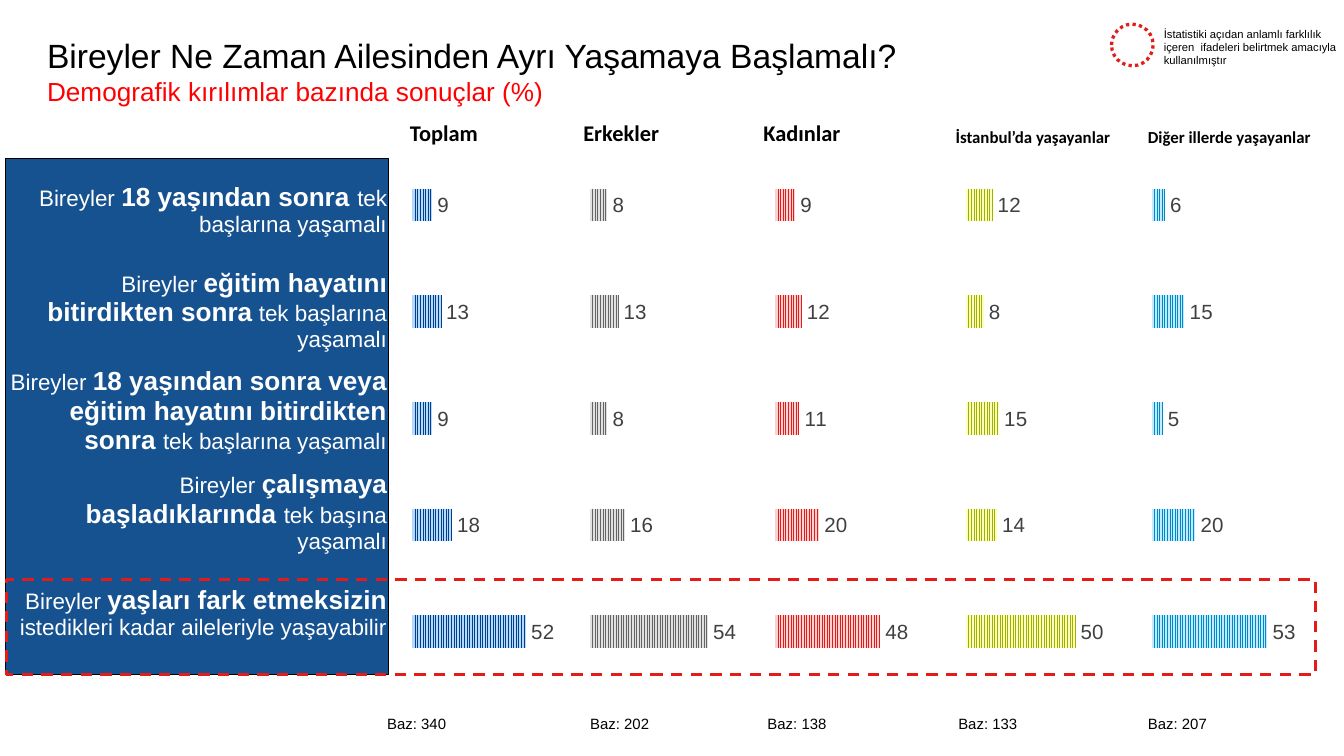
"""Build a slide of survey results by demographic group on when to leave home."""
from dataclasses import dataclass
from typing import NamedTuple

from lxml import etree
from pptx import Presentation
from pptx import util as u
from pptx.chart import data as cd
from pptx.dml import color as dc
from pptx.enum import chart as ch
from pptx.enum import dml, shapes, text
from pptx.oxml import ns

PX = u.Inches(1) // 100
COLORS = {
    "black": "000000", "white": "FFFFFF", "subtitle": "FF0000", "label": "404040",
    "navy": "004186", "navy_pale": "B4D8FF", "gray": "646464", "gray_pale": "E0E0E0",
    "red": "E31B19", "red_pale": "FAD1D1", "lime": "A1AF00", "lime_pale": "FAFFBC",
    "sky": "0087C8", "sky_pale": "C1EBFF",
}
NO_STYLE = "{2D5ABB26-0587-4C30-8999-92F81FD0307C}"
PLOT = {"x": 0.053, "y": 0.019, "w": 0.75, "h": 0.945}


class Area(NamedTuple):
    left: int
    top: int
    width: int
    height: int

    def emu(self) -> list[int]:
        return [side * PX for side in self]


class Answer(NamedTuple):
    lead: str
    stress: str
    tail: str


@dataclass
class Group:
    heading: str
    heading_area: Area
    heading_size: int
    chart_left: int
    values: tuple[int, ...]
    color: str
    base: int
    base_left: int


ANSWERS = [
    Answer("Bireyler ", "18 yaşından sonra ", "tek başlarına yaşamalı"),
    Answer("Bireyler ", "eğitim hayatını bitirdikten sonra", " tek başlarına yaşamalı"),
    Answer("Bireyler ", "18 yaşından sonra veya eğitim hayatını bitirdikten sonra ",
           "tek başlarına yaşamalı"),
    Answer("Bireyler ", "çalışmaya başladıklarında ", "tek başına yaşamalı"),
    Answer("Bireyler ", "yaşları fark etmeksizin", " istedikleri kadar aileleriyle yaşayabilir"),
]
GROUPS = [
    Group("Toplam", Area(300, 84, 177, 30), 12, 300, (9, 13, 9, 18, 52), "navy", 340, 288),
    Group("Erkekler", Area(429, 84, 102, 30), 12, 432, (8, 13, 8, 16, 54), "gray", 202, 439),
    Group("Kadınlar", Area(563, 84, 118, 30), 12, 570, (9, 12, 11, 20, 48), "red", 138, 571),
    Group("İstanbul’da yaşayanlar", Area(706, 89, 129, 25), 9, 712, (12, 8, 15, 14, 50),
          "lime", 133, 713),
    Group("Diğer illerde yaşayanlar", Area(849, 89, 139, 25), 9, 850, (6, 15, 5, 20, 53),
          "sky", 207, 854),
]


def rgb(name: str) -> dc.RGBColor:
    return dc.RGBColor.from_string(COLORS[name])


def style(font, *, size: float, color: str = "black", bold: bool = False,
          name: str = "Arial") -> None:
    font.name, font.size, font.bold = name, u.Pt(size), bold
    font.color.rgb = rgb(color)


def write(para, words: str, **form) -> None:
    span = para.add_run()
    span.text = words
    style(span.font, **form)


def set_insets(frame, inset: int) -> None:
    frame.margin_left = frame.margin_right = inset * PX
    frame.margin_top = frame.margin_bottom = inset * PX


def add_text(page, area: Area, words: str, *, inset: int = 0, grow: bool = False, **form) -> None:
    frame = page.shapes.add_textbox(*area.emu()).text_frame
    frame.word_wrap = True
    frame.auto_size = text.MSO_AUTO_SIZE.SHAPE_TO_FIT_TEXT if grow else text.MSO_AUTO_SIZE.NONE
    set_insets(frame, inset)
    write(frame.paragraphs[0], words, **form)


def add_outline(page, kind, area: Area, *, color: str, width: float, dash=None):
    box = page.shapes.add_shape(kind, *area.emu())
    box.shadow.inherit = False
    box.fill.background()
    box.line.color.rgb = rgb(color)
    box.line.width = u.Pt(width)
    if dash is not None:
        box.line.dash_style = dash
    return box


def fill_title(page) -> None:
    title = page.shapes.title
    title.left, title.top, title.width, title.height = Area(35, 21, 815, 63).emu()
    frame = title.text_frame
    frame.word_wrap = True
    frame.auto_size = text.MSO_AUTO_SIZE.NONE
    frame.vertical_anchor = text.MSO_ANCHOR.MIDDLE
    set_insets(frame, 0)
    para = frame.paragraphs[0]
    para.alignment = text.PP_ALIGN.LEFT
    write(para, "Bireyler Ne Zaman Ailesinden Ayrı Yaşamaya Başlamalı?", size=18)
    para.add_line_break()
    write(para, "Demografik kırılımlar bazında sonuçlar (%)", size=14, color="subtitle")


def add_panel(page) -> None:
    panel = add_outline(page, shapes.MSO_SHAPE.RECTANGLE, Area(4, 118, 285, 384),
                        color="black", width=0.75)
    panel.fill.solid()
    panel.fill.fore_color.rgb = rgb("navy")
    tint = panel.fill._xPr.find(".//" + ns.qn("a:srgbClr"))
    etree.SubElement(tint, ns.qn("a:alpha")).set("val", "91000")


def add_answers(page, answers: list[Answer]) -> None:
    area = Area(5, 118, 284, 75 * len(answers))
    table = page.shapes.add_table(len(answers), 1, *area.emu()).table
    table.first_row = table.horz_banding = False
    table._tbl.tblPr.find(ns.qn("a:tableStyleId")).text = NO_STYLE
    for row, answer in enumerate(answers):
        cell = table.cell(row, 0)
        cell.fill.background()
        cell.vertical_anchor = text.MSO_ANCHOR.MIDDLE
        set_insets(cell, 1)
        cell.margin_bottom = 0
        para = cell.text_frame.paragraphs[0]
        para.alignment = text.PP_ALIGN.RIGHT
        write(para, answer.lead, size=12, color="white")
        write(para, answer.stress, size=14, color="white", bold=True)
        write(para, answer.tail, size=12, color="white")


def place_plot(chart) -> None:
    plot_area = chart._chartSpace.chart.plotArea
    for old in plot_area.findall(ns.qn("c:layout")):
        plot_area.remove(old)
    layout = etree.Element(ns.qn("c:layout"))
    plot_area.insert(0, layout)
    manual = etree.SubElement(layout, ns.qn("c:manualLayout"))
    settings = {"layoutTarget": "inner", "xMode": "edge", "yMode": "edge", **PLOT}
    for tag, value in settings.items():
        etree.SubElement(manual, ns.qn("c:" + tag)).set("val", str(value))


def add_bars(page, group: Group) -> None:
    data = cd.CategoryChartData()
    data.categories = ["1", "2", "3"]
    data.add_series("Series 1", group.values)
    area = Area(group.chart_left, 105, 130, 420)
    chart = page.shapes.add_chart(ch.XL_CHART_TYPE.BAR_CLUSTERED, *area.emu(), data).chart
    chart.has_title = chart.has_legend = False
    style(chart.font, size=10)
    place_plot(chart)
    for axis in (chart.category_axis, chart.value_axis):
        axis.visible = axis.has_major_gridlines = False
    chart.category_axis.reverse_order = True
    chart.value_axis.minimum_scale, chart.value_axis.maximum_scale = 0, 60
    plot = chart.plots[0]
    plot.gap_width, plot.overlap, plot.vary_by_categories = 227, -48, False
    fill = plot.series[0].format.fill
    fill.patterned()
    fill.pattern = dml.MSO_PATTERN.NARROW_VERTICAL
    fill.fore_color.rgb = rgb(group.color)
    fill.back_color.rgb = rgb(group.color + "_pale")
    labels = plot.series[0].data_labels
    labels.show_value = True
    labels.number_format, labels.number_format_is_linked = "#,##0", False
    labels.position = ch.XL_LABEL_POSITION.OUTSIDE_END
    style(labels.font, size=11, color="label")


def main() -> None:
    deck = Presentation()
    deck.slide_width = 1000 * PX
    deck.slide_height = deck.slide_width * 9 // 16
    page = deck.slides.add_slide(deck.slide_layouts[5])
    fill_title(page)
    add_panel(page)
    add_answers(page, ANSWERS)
    for group in GROUPS:
        add_bars(page, group)
        add_text(page, group.heading_area, group.heading, inset=5, grow=True,
                 size=group.heading_size, bold=True, name="Calibri")
        add_text(page, Area(group.base_left, 532, 71, 17), f"Baz: {group.base}", size=8)
    add_outline(page, shapes.MSO_SHAPE.OVAL, Area(827, 18, 31, 31), color="red", width=1.75,
                dash=dml.MSO_LINE.ROUND_DOT)
    add_text(page, Area(866, 20, 130, 29), "İstatistiki açıdan anlamlı farklılık içeren  "
             "ifadeleri belirtmek amacıyla kullanılmıştır", size=6)
    add_outline(page, shapes.MSO_SHAPE.RECTANGLE, Area(5, 431, 974, 71), color="red", width=1.5,
                dash=dml.MSO_LINE.DASH)
    deck.save("out.pptx")


if __name__ == "__main__":
    main()
